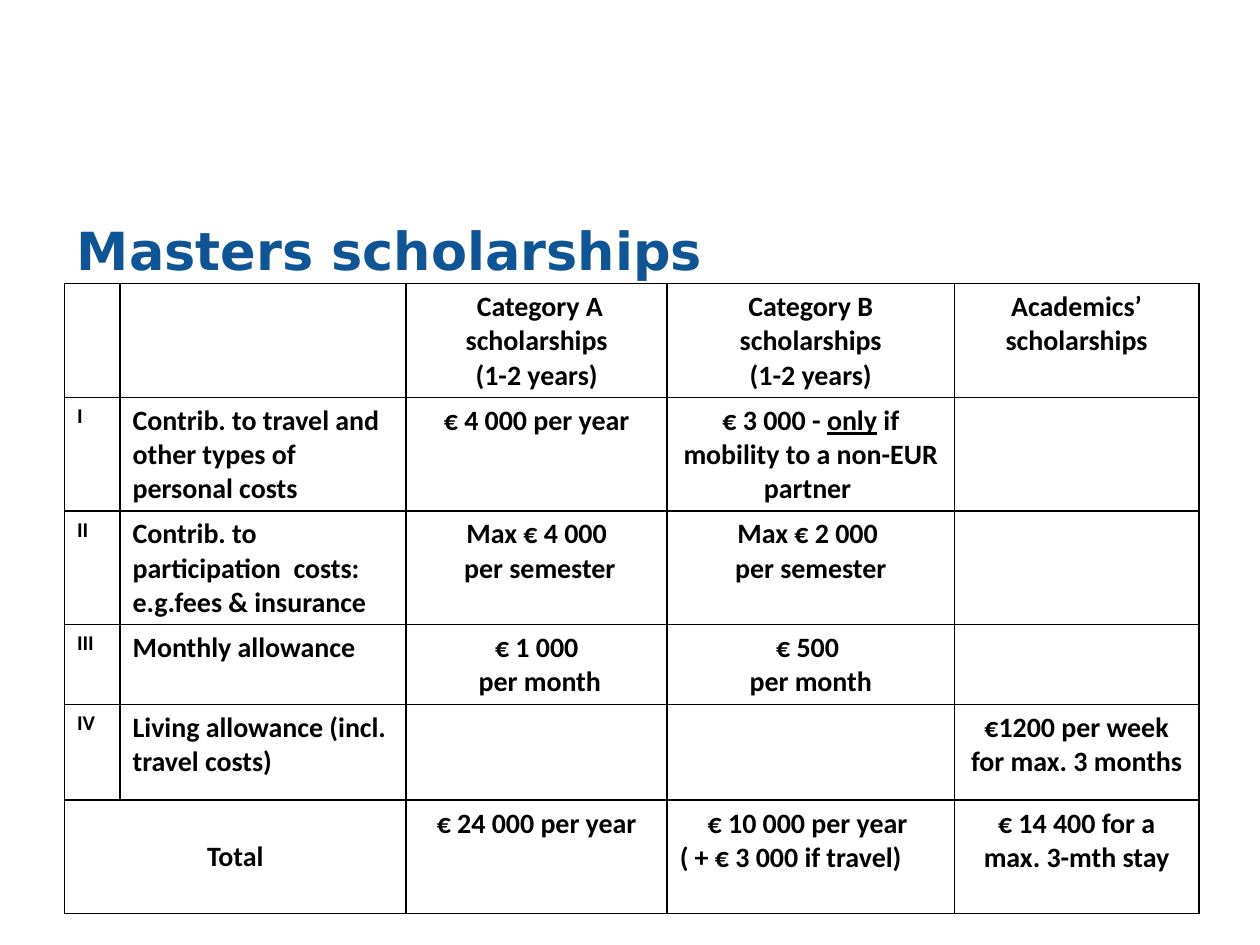
from dataclasses import dataclass

from lxml.etree import SubElement
from pptx import Presentation
from pptx.dml.color import RGBColor
from pptx.enum.text import MSO_ANCHOR, PP_ALIGN
from pptx.oxml.ns import qn
from pptx.slide import Slide
from pptx.table import _Cell
from pptx.text.text import _Paragraph
from pptx.util import Cm, Pt

TITLE_BLUE = RGBColor(0x0F, 0x54, 0x94)
BLACK = RGBColor(0, 0, 0)
WHITE = RGBColor(255, 255, 255)

LEFT, CENTER, JUSTIFY = PP_ALIGN.LEFT, PP_ALIGN.CENTER, PP_ALIGN.JUSTIFY
COLUMN_WIDTHS = (1.12, 5.77, 5.26, 5.79, 4.93)
ROW_HEIGHTS = (2.29, 2.29, 2.29, 1.6, 1.93, 2.29)


@dataclass(frozen=True)
class Line:
    runs: tuple[str, ...]
    align: PP_ALIGN = CENTER
    size: int = 16
    underlined: str = ""


def centered(*texts: str) -> list[Line]:
    return [Line((text,)) for text in texts]


def numeral(text: str) -> list[Line]:
    return [Line((text,), JUSTIFY, 12)]


def cost(text: str, align: PP_ALIGN = LEFT) -> list[Line]:
    return [Line((text,), align)]


SCHOLARSHIPS: list[list[list[Line]]] = [
    [[], [],
     centered(" Category A scholarships", "(1-2 years)"),
     centered("Category B scholarships", "(1-2 years)"),
     centered("Academics’ scholarships")],
    [numeral("I"), cost("Contrib. to travel and other types of personal costs"),
     centered("€ 4 000 per year"),
     [Line(("€ 3 000 - ", "only", " if mobility to a non-EUR partner "), underlined="only")],
     []],
    [numeral("II"), cost("Contrib. to  participation  costs: e.g.fees & insurance"),
     centered("Max € 4 000", " per semester"),
     centered("Max € 2 000 ", "per semester"),
     []],
    [numeral("III"), cost("Monthly allowance", JUSTIFY),
     centered("€ 1 000", " per month"),
     centered("€ 500 ", "per month"),
     []],
    [numeral("IV"), cost("Living allowance (incl. travel costs)"),
     [], [],
     centered("€1200 per week for max. 3 months")],
    [centered("Total"), [],
     centered("€ 24 000 per year"),
     centered("€ 10 000 per year ") + cost("( + € 3 000 if travel)", JUSTIFY),
     centered("€ 14 400 for a max. 3-mth stay")],
]


def add_run(paragraph: _Paragraph, text: str, font_name: str, size: int,
            color: RGBColor, underline: bool = False) -> None:
    run = paragraph.add_run()
    run.text = text
    run.font.name = font_name
    run.font.size = Pt(size)
    run.font.bold = True
    run.font.color.rgb = color
    if underline:
        run.font.underline = True


def style_cell(cell: _Cell) -> None:
    properties = cell._tc.get_or_add_tcPr()
    for side in ("a:lnL", "a:lnR", "a:lnT", "a:lnB"):
        border = SubElement(properties, qn(side), w=str(Pt(1)))
        border_fill = SubElement(border, qn("a:solidFill"))
        SubElement(border_fill, qn("a:srgbClr"), val=str(BLACK))
    cell.fill.solid()
    cell.fill.fore_color.rgb = WHITE
    fill_color = properties.find(qn("a:solidFill")).find(qn("a:srgbClr"))
    SubElement(fill_color, qn("a:alpha"), val="50000")


def write_cell(cell: _Cell, lines: list[Line]) -> None:
    frame = cell.text_frame
    for index, line in enumerate(lines):
        paragraph = frame.add_paragraph() if index else frame.paragraphs[0]
        paragraph.alignment = line.align
        for text in line.runs:
            add_run(paragraph, text, "Calibri", line.size, BLACK, text == line.underlined)


def add_title(slide: Slide) -> None:
    title = slide.shapes.add_textbox(Cm(1.3), Cm(3.73), Cm(22.86), Cm(2.59)).text_frame
    title.word_wrap = True
    title.vertical_anchor = MSO_ANCHOR.MIDDLE
    heading = title.paragraphs[0]
    properties = heading._p.get_or_add_pPr()
    properties.set("marL", str(Cm(1)))
    properties.set("indent", str(Cm(-1)))
    add_run(heading, "Masters scholarships", "DejaVu Sans", 30, TITLE_BLUE)


def add_scholarship_table(slide: Slide) -> None:
    table = slide.shapes.add_table(
        len(ROW_HEIGHTS), len(COLUMN_WIDTHS), Cm(1.3), Cm(5.72),
        Cm(sum(COLUMN_WIDTHS)), Cm(sum(ROW_HEIGHTS))).table
    table.first_row = False
    table.horz_banding = False
    for column, width in zip(table.columns, COLUMN_WIDTHS):
        column.width = Cm(width)
    for row, height in zip(table.rows, ROW_HEIGHTS):
        row.height = Cm(height)
    for row, contents in zip(table.rows, SCHOLARSHIPS):
        for cell, lines in zip(row.cells, contents):
            style_cell(cell)
            write_cell(cell, lines)
    total = table.cell(len(ROW_HEIGHTS) - 1, 0)
    total.merge(table.cell(len(ROW_HEIGHTS) - 1, 1))
    total.vertical_anchor = MSO_ANCHOR.MIDDLE


def main() -> None:
    """Build the Masters scholarships slide."""
    presentation = Presentation()
    presentation.slide_width = Cm(25.4)
    presentation.slide_height = Cm(19.05)
    slide = presentation.slides.add_slide(presentation.slide_layouts[6])
    add_title(slide)
    add_scholarship_table(slide)
    presentation.save("out.pptx")


if __name__ == "__main__":
    main()
